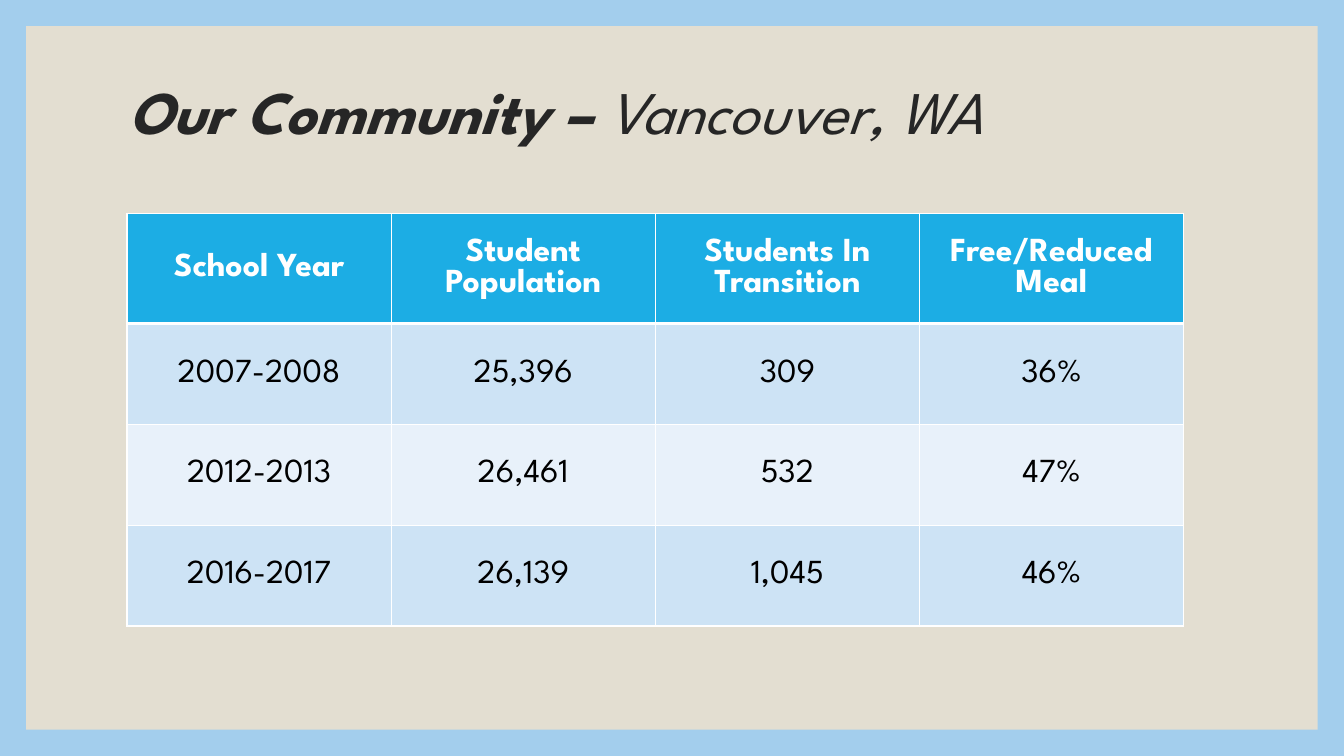
import pptx
import pptx.util
import pptx.dml.color
import pptx.enum.shapes
import pptx.enum.text
import pptx.oxml
import pptx.oxml.ns
from dataclasses import dataclass

TITLE = [("Our Community – ", True), ("Vancouver, WA", False)]
ROWS = [
    ("School Year", "Student Population", "Students In Transition", "Free/Reduced Meal"),
    ("2007-2008", "25,396", "309", "36%"),
    ("2012-2013", "26,461", "532", "47%"),
    ("2016-2017", "26,139", "1,045", "46%"),
]


@dataclass(frozen=True)
class Theme:
    font: str = "League Spartan"
    frame: str = "A3CEED"
    panel: str = "E3DED1"
    title: str = "262626"
    head: str = "1CADE4"
    bands: tuple = ("E8F1FA", "CDE3F5")
    white: str = "FFFFFF"
    black: str = "000000"
    big: float = 43.2
    body: float = 24
    thin: float = 1
    thick: float = 3


LOOK = Theme()
WIDE, HIGH = 13.33, 7.5
EDGE = 0.26
LEFT, TOP = 1.26, 2.12
COL, HEAD, ROW = 2.62, 1.09, 1


def inch(*sizes):
    return [pptx.util.Inches(size) for size in sizes]


def paint(fill, color):
    fill.solid()
    fill.fore_color.rgb = pptx.dml.color.RGBColor.from_string(color)


def write(para, text, size, color, bold, italic=False):
    run = para.add_run()
    run.text = text
    font = run.font
    font.name, font.size = LOOK.font, pptx.util.Pt(size)
    font.bold, font.italic = bold, italic
    font.color.rgb = pptx.dml.color.RGBColor.from_string(color)


def border(cell, widths):
    props = cell._tc.get_or_add_tcPr()
    for spot, (side, width) in enumerate(widths.items()):
        line = pptx.oxml.parse_xml(
            f'<a:ln{side} {pptx.oxml.ns.nsdecls("a")} w="{pptx.util.Pt(width)}">'
            f'<a:solidFill><a:srgbClr val="{LOOK.white}"/></a:solidFill></a:ln{side}>'
        )
        props.insert(spot, line)


def add_panel(slide):
    panel = slide.shapes.add_shape(
        pptx.enum.shapes.MSO_SHAPE.RECTANGLE,
        *inch(EDGE, EDGE, WIDE - 2 * EDGE, HIGH - 2 * EDGE),
    )
    panel.shadow.inherit = False
    paint(panel.fill, LOOK.panel)
    panel.line.fill.background()
    slide.shapes._spTree.insert(2, panel._element)


def add_title(slide):
    title = slide.shapes.title
    title.left, title.top, title.width, title.height = inch(1.17, 0.39, 11, 1.5)
    frame = title.text_frame
    frame.word_wrap = True
    frame.vertical_anchor = pptx.enum.text.MSO_ANCHOR.MIDDLE
    para = frame.paragraphs[0]
    para.alignment = pptx.enum.text.PP_ALIGN.LEFT
    para.line_spacing = 0.9
    for text, bold in TITLE:
        write(para, text, LOOK.big, LOOK.title, bold, True)


def add_grid(slide):
    count, span = len(ROWS), len(ROWS[0])
    high = HEAD + ROW * (count - 1)
    grid = slide.shapes.add_table(count, span, *inch(LEFT, TOP, COL * span, high)).table
    for col in grid.columns:
        col.width = pptx.util.Inches(COL)
    for r, texts in enumerate(ROWS):
        first = r == 0
        grid.rows[r].height = pptx.util.Inches(HEAD if first else ROW)
        for c, text in enumerate(texts):
            cell = grid.cell(r, c)
            cell.vertical_anchor = pptx.enum.text.MSO_ANCHOR.MIDDLE
            paint(cell.fill, LOOK.head if first else LOOK.bands[r % 2])
            para = cell.text_frame.paragraphs[0]
            para.alignment = pptx.enum.text.PP_ALIGN.CENTER
            write(para, text, LOOK.body, LOOK.white if first else LOOK.black, first)
            border(cell, {
                "L": LOOK.thin,
                "R": LOOK.thin,
                "T": LOOK.thick if r == 1 else LOOK.thin,
                "B": LOOK.thick if first else LOOK.thin,
            })


def main():
    deck = pptx.Presentation()
    deck.slide_width, deck.slide_height = inch(WIDE, HIGH)
    slide = deck.slides.add_slide(deck.slide_layouts[5])
    paint(slide.background.fill, LOOK.frame)
    add_panel(slide)
    add_title(slide)
    add_grid(slide)
    deck.save("out.pptx")


if __name__ == "__main__":
    main()
